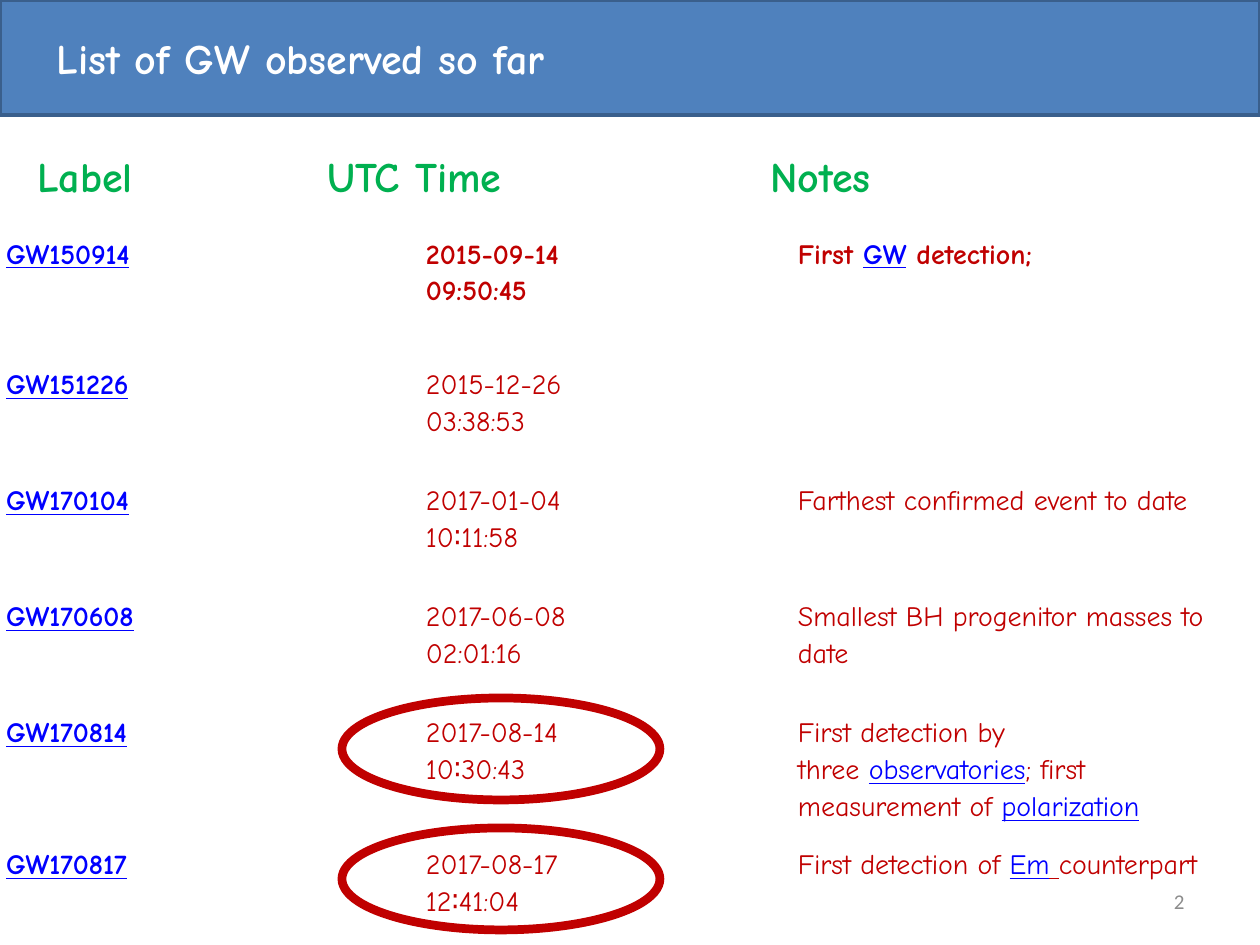
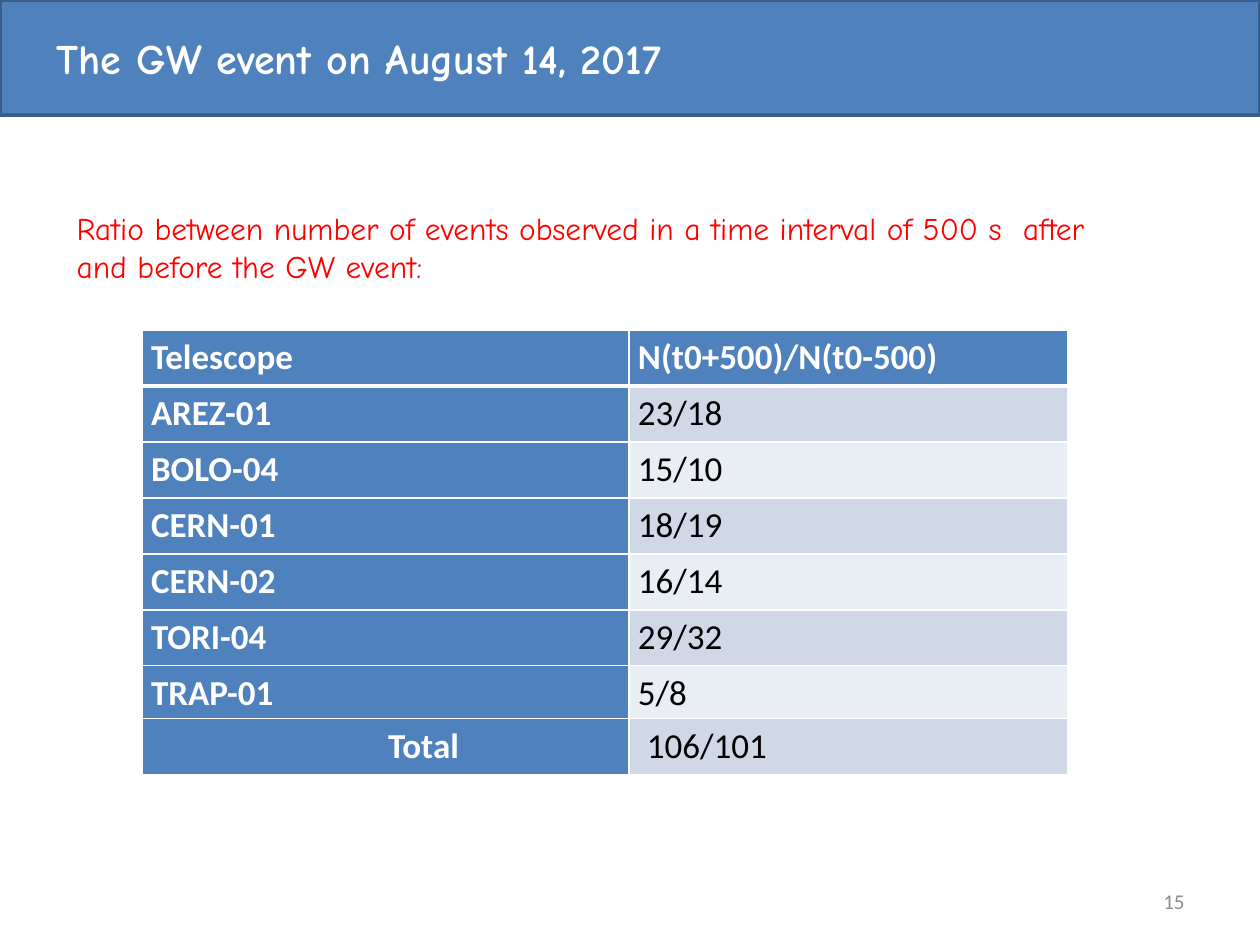
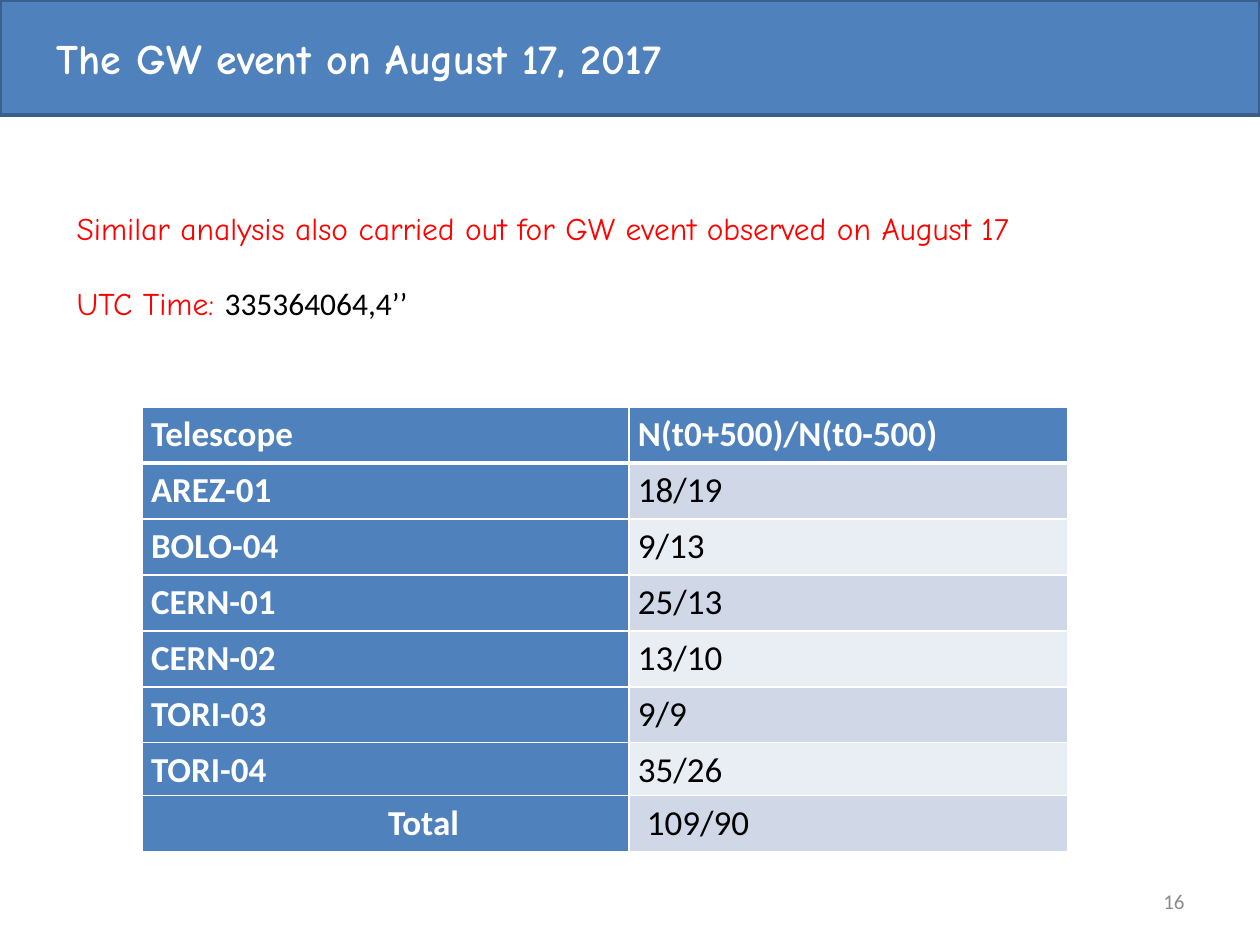
from copy import deepcopy

from lxml import etree
from pptx import Presentation
from pptx.dml.color import RGBColor
from pptx.enum.shapes import MSO_SHAPE
from pptx.enum.text import MSO_ANCHOR, MSO_AUTO_SIZE, PP_ALIGN
from pptx.oxml.ns import qn
from pptx.util import Emu, Pt

RECT, OVAL = MSO_SHAPE.RECTANGLE, MSO_SHAPE.OVAL
TOP, MIDDLE = MSO_ANCHOR.TOP, MSO_ANCHOR.MIDDLE
LEFT, RIGHT = PP_ALIGN.LEFT, PP_ALIGN.RIGHT
FIXED = MSO_AUTO_SIZE.NONE
SCALE = 914400 / 126  # EMU in one px

HUES = {"band": "4F81BD", "edge": "3A5F8C", "white": "FFFFFF", "black": "000000",
        "green": "00B050", "red": "FF0000", "dark": "C00000", "link": "0000FF",
        "grey": "8C8C8C", "odd": "D0D8E8", "even": "E9EDF4"}

# Text styles
HAND, SANS = "Comic Neue", "Calibri"
LOOKS = {
    "title": dict(name=HAND, size=Pt(24), bold=True, hue="white"),
    "head": dict(name=HAND, size=Pt(24), bold=True, hue="green"),
    "lead": dict(name=HAND, size=Pt(18), bold=False, hue="red"),
    "stamp": dict(name=SANS, size=Pt(18), bold=False, hue="black"),
    "page": dict(name=SANS, size=Pt(12), bold=False, hue="grey"),
    "note": dict(name=HAND, size=Pt(16), bold=False, hue="dark"),
    "strong": dict(name=HAND, size=Pt(16), bold=True, hue="dark"),
    "gap": dict(name=HAND, size=Pt(16), bold=False, underline=True, hue="dark"),
    "link": dict(name=HAND, size=Pt(16), bold=False, underline=True, hue="link"),
    "label": dict(name=HAND, size=Pt(16), bold=True, underline=True, hue="link"),
    "name": dict(name=SANS, size=Pt(20), bold=True, hue="white"),
    "value": dict(name=SANS, size=Pt(20), bold=False, hue="black"),
}


def px(n):
    return Emu(round(n * SCALE))


def write(para, runs):
    for text, look in runs:
        for i, line in enumerate(text.split("\n")):
            if i:
                para.add_line_break()
                para._p[-1].append(deepcopy(run._r.rPr))
            run = para.add_run()
            run.text = line
            for key, val in LOOKS[look].items():
                if key == "hue":
                    run.font.color.rgb = RGBColor.from_string(HUES[val])
                else:
                    setattr(run.font, key, val)


# Observed events: label, time, notes
EVENTS = [
    ("GW150914", "2015-09-14\n09:50:45",
     [("First ", "strong"), ("GW", "label"), (" detection;", "strong")]),
    ("GW151226", "2015-12-26\n03:38:53", []),
    ("GW170104", "2017-01-04\n10∶11:58", [("Farthest confirmed event to date", "note")]),
    ("GW170608", "2017-06-08\n02:01:16", [("Smallest BH progenitor masses to date", "note")]),
    ("GW170814", "2017-08-14\n10∶30:43",
     [("First detection by\nthree ", "note"), ("observatories", "link"),
      ("; first\nmeasurement of ", "note"), ("polarization", "link")]),
    ("GW170817", "2017-08-17\n12∶41:04",
     [("First detection of ", "note"), ("Em", "link"), (" ", "gap"),
      ("counterpart", "note")]),
]

# Telescope counts after and before each event
AUG14 = [("AREZ-01", "23/18"), ("BOLO-04", "15/10"), ("CERN-01", "18/19"),
         ("CERN-02", "16/14"), ("TORI-04", "29/32"), ("TRAP-01", "5/8"),
         ("Total", "106/101")]
AUG17 = [("AREZ-01", "18/19"), ("BOLO-04", "9/13"), ("CERN-01", "25/13"),
         ("CERN-02", "13/10"), ("TORI-03", "9/9"), ("TORI-04", "35/26"),
         ("Total", "109/90")]

# Each cell is (fill, left margin, runs)
event_rows = []
for i, (label, time, notes) in enumerate(EVENTS):
    cells = [[(label, "label")], [(time, "note" if i else "strong")], notes]
    event_rows.append([(None, 9, runs) for runs in cells])

count_rows = []
for counts in (AUG14, AUG17):
    rows = [[("band", 9, [("Telescope", "name")]),
             ("band", 9, [("N(t0+500)/N(t0-500)", "name")])]]
    for i, (name, value) in enumerate(counts):
        last = name == "Total"
        rows.append([("band", 246 if last else 9, [(name, "name")]),
                     ("even" if i % 2 else "odd", 18 if last else 9, [(value, "value")])])
    count_rows.append(rows)

# Layout 5 has a title only, layout 1 a title and a body
COUNT = dict(layout=1, heads=[], rings=[], wide=1101,
             left=142, cols=[487, 439], heights=[56] * 6 + [53, 56])
SLIDES = [
    dict(title="List of GW observed so far", page="2", layout=5, wide=764,
         heads=[("Label", 25), ("UTC Time", 315), ("Notes", 758)], rings=[698, 828],
         left=-3, top=234, cols=[420, 372, 469],
         heights=[131, 116, 116, 116, 132, 100], rows=event_rows),
    dict(title="The GW event on August 14, 2017", page="15", high=165,
         text=[[("Ratio between number of events observed in a time interval of 500 s  after "
                 "and before the GW event:", "lead")]],
         top=330, rows=count_rows[0], **COUNT),
    dict(title="The GW event on August 17, 2017", page="16", high=242,
         text=[[("Similar analysis also carried out for GW event observed on August 17", "lead")],
               [("UTC Time: ", "lead"), ("335364064,4’’", "stamp")]],
         top=407, rows=count_rows[1], **COUNT),
]

deck = Presentation()
deck.slide_width, deck.slide_height = px(1260), px(945)

for item in SLIDES:
    slide = deck.slides.add_slide(deck.slide_layouts[item["layout"]])
    shapes = slide.shapes
    title = shapes.title

    # Band behind the title
    band = shapes.add_shape(RECT, 0, 0, px(1260), px(115))
    band.shadow.inherit = False
    band.fill.solid()
    band.fill.fore_color.rgb = RGBColor.from_string(HUES["band"])
    band.line.color.rgb = RGBColor.from_string(HUES["edge"])
    band.line.width = Pt(2)
    title.element.addprevious(band.element)

    # Title, page number, lead text and column heads
    page = shapes.add_textbox(0, 0, 0, 0)
    blocks = [
        (title, (44, 26, item["wide"], 63), 6, TOP, LEFT, [[(item["title"], "title")]]),
        (page, (903, 876, 294, 50), 6, MIDDLE, RIGHT, [[(item["page"], "page")]]),
    ]
    if "text" in item:
        body = slide.placeholders[1]
        blocks.append((body, (64, 165, 1081, item["high"]), 44, TOP, LEFT, item["text"]))
    for head, left in item["heads"]:
        box = shapes.add_textbox(0, 0, 0, 0)
        blocks.append((box, (left, 145, 250, 63), 6, TOP, LEFT, [[(head, "head")]]))
    for box, place, pad, anchor, align, paras in blocks:
        box.left, box.top, box.width, box.height = map(px, place)
        frame = box.text_frame
        frame.word_wrap, frame.auto_size = True, FIXED
        frame.vertical_anchor, frame.margin_top = anchor, px(pad)
        for i, runs in enumerate(paras):
            para = frame.add_paragraph() if i else frame.paragraphs[0]
            para.alignment = align
            para.space_before = px(37 * i)
            props = para._p.get_or_add_pPr()
            props.set("marL", "0")
            props.set("indent", "0")
            etree.SubElement(props, qn("a:buNone"))
            write(para, runs)

    # Table
    cols, heights = item["cols"], item["heights"]
    table = shapes.add_table(len(heights), len(cols), px(item["left"]), px(item["top"]),
                             px(sum(cols)), px(sum(heights))).table
    table.first_row = table.horz_banding = False
    for col, width in zip(table.columns, cols):
        col.width = px(width)
    for r, (row, height) in enumerate(zip(table.rows, heights)):
        row.height = px(height)
        for cell, (fill, inset, runs) in zip(row.cells, item["rows"][r]):
            cell.margin_left, cell.margin_right = px(inset), px(9)
            cell.margin_top = cell.margin_bottom = 0
            props = cell._tc.get_or_add_tcPr()
            for side in "LRTB":
                thick = (r, side) in ((0, "B"), (1, "T"))
                line = etree.SubElement(props, qn("a:ln" + side), w=str(Pt(3 if thick else 1)))
                paint = etree.SubElement(line, qn("a:solidFill"))
                etree.SubElement(paint, qn("a:srgbClr"), val=HUES["white"])
            if fill:
                cell.fill.solid()
                cell.fill.fore_color.rgb = RGBColor.from_string(HUES[fill])
            else:
                cell.fill.background()
            para = cell.text_frame.paragraphs[0]
            para.line_spacing = 1.15
            write(para, runs)

    # Rings around the two August times
    for top in item["rings"]:
        ring = shapes.add_shape(OVAL, px(342), px(top), px(318), px(102))
        ring.shadow.inherit = False
        ring.fill.background()
        ring.line.color.rgb = RGBColor.from_string(HUES["dark"])
        ring.line.width = Pt(5)

deck.save("out.pptx")
